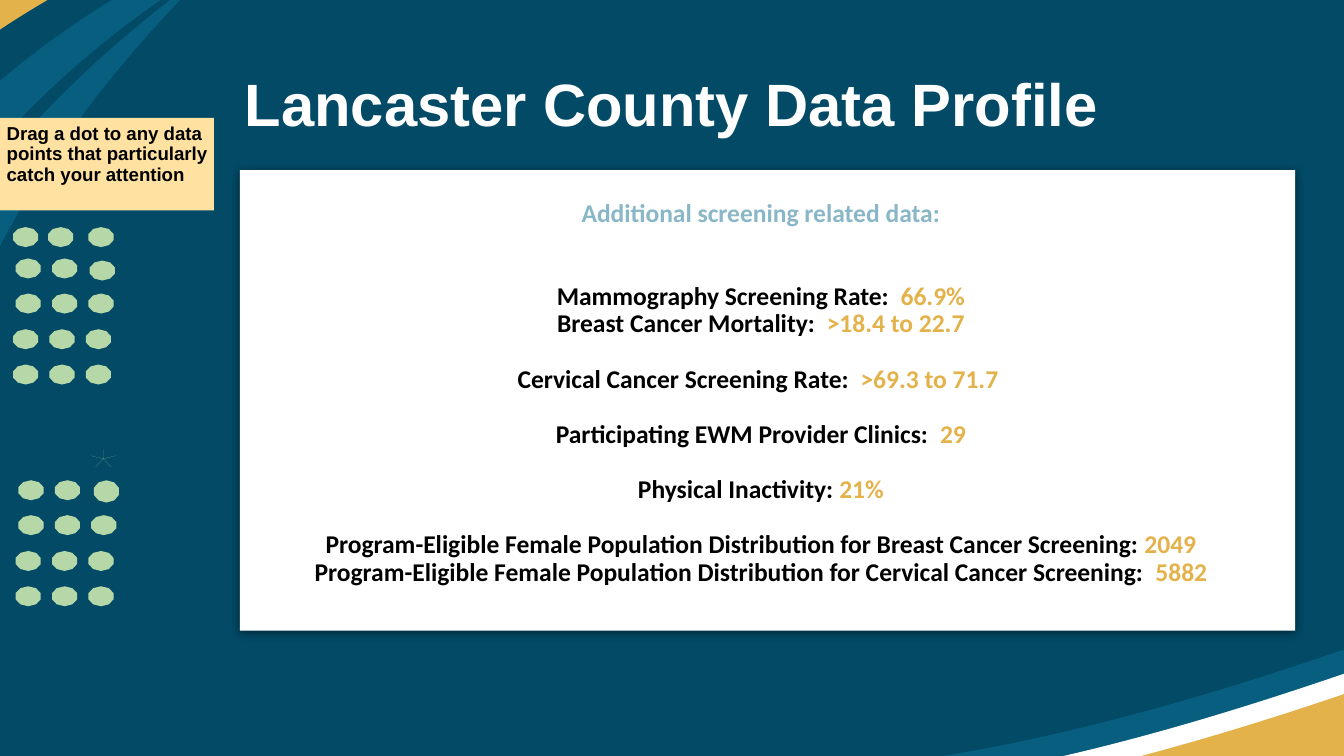
from lxml.etree import SubElement
from pptx import Presentation
from pptx.dml.color import RGBColor
from pptx.enum.shapes import MSO_SHAPE
from pptx.enum.text import MSO_ANCHOR, PP_ALIGN
from pptx.oxml.ns import qn
from pptx.util import Pt

COLORS = {
    "navy": "024A66", "teal": "075E7F", "gold": "E3B24A", "white": "FFFFFF",
    "cream": "FFE2A1", "dot": "B6D7A8", "sky": "89B7C8", "black": "000000",
}

TITLE = "Lancaster County Data Profile"
PROMPT = "Drag a dot to any data points that particularly catch your attention"
HEADING = "Additional screening related data:"
FACT_GROUPS = [
    [("Mammography Screening Rate:  ", "66.9%"),
     ("Breast Cancer Mortality:  ", ">18.4 to 22.7")],
    [("Cervical Cancer Screening Rate:  ", ">69.3 to 71.7 ")],
    [("Participating EWM Provider Clinics:  ", "29")],
    [("Physical Inactivity: ", "21%")],
    [("Program-Eligible Female Population Distribution for Breast Cancer Screening: ", "2049"),
     ("Program-Eligible Female Population Distribution for Cervical Cancer Screening:  ", "5882")],
]
LINE_GAP = 14.8

DOT_ROWS = [(7, 121.7), (8.4, 138.5), (8.4, 157.3), (7, 176.4), (7, 195.3),
            (9.9, 257.3), (9.9, 276), (8.4, 295.2), (8.4, 314.1)]
DOT_NUDGES = {(0, 1): (-0.7, 0, 0), (0, 2): (1.4, 0, 0), (1, 2): (0.7, 1.1, 0),
              (5, 2): (1.4, 0, 1.1)}
DOT_PITCH, DOT_WIDTH, DOT_HEIGHT = 19.5, 13.5, 9.7
SPARKLE = (48.7, 240.5)

RAY_TOP = [(203.8, -64.1), (123.1, -43.9, 46.8, -10.1, -17.3, 41.8),
           (-13.7, 59, -10.8, 75.6, -13.7, 91.4)]
SWOOSHES = [
    ("gold", [(100, -36), (-31, -36), (-30.2, -8.6, -27.4, 19.4, -36, 42.5),
              (4.3, 9.4, 51.1, -16.6, 100, -36)]),
    ("teal", [(111.6, -15.1), (43.9, 33.1, -14.4, 93.6, -54, 164.9),
              (-44.6, 179.3, -35.3, 194.4, -32.4, 210.2),
              (-5.8, 123.8, 46.8, 48.2, 111.6, -15.1)]),
    ("teal", RAY_TOP + [(43.2, 21.6, 120.2, -28.8, 203.8, -64.1)]),
    ("navy", RAY_TOP + [(-10.8, 88.6, -7.9, 85, -5.8, 82.1),
                        (-6.5, 72.7, -8.6, 62.6, -11.5, 53.3),
                        (49.7, -2.2, 124.6, -39.6, 203.8, -64.1)]),
    ("teal", [(752.4, 401), (744.5, 407.5, 735.8, 411.8, 725.8, 415.4), (408.2, 415.4),
              (421.2, 414.7, 434.2, 414, 447.1, 413.3),
              (478.8, 409.7, 510.5, 404.6, 542.2, 398.2),
              (619.2, 382.3, 694.8, 357.8, 769, 330.5),
              (784.1, 353.5, 774, 384.5, 752.4, 401)]),
    ("white", [(754.6, 413.3), (753.8, 414, 752.4, 414.7, 751.7, 415.4), (517, 415.4),
               (526.3, 414, 535.7, 411.8, 545, 410.4),
               (622.1, 394.6, 697.7, 369.4, 771.8, 342.7),
               (786.2, 365, 776.2, 396.7, 754.6, 413.3)]),
    ("gold", [(569.5, 415.4), (638.6, 399.6, 707, 377.3, 774, 352.8),
              (786.2, 372.2, 780.5, 398.2, 765.4, 415.4)]),
]


def rgb(name):
    return RGBColor.from_string(COLORS[name])


def paint(shape, color):
    shape.shadow.inherit = False
    shape.fill.solid()
    shape.fill.fore_color.rgb = rgb(color)
    shape.line.fill.background()
    return shape


def add_block(slide, kind, left, top, width, height, color):
    return paint(slide.shapes.add_shape(kind, Pt(left), Pt(top), Pt(width), Pt(height)), color)


def add_swoosh(slide, color, segments):
    start, *ends = [(Pt(segment[-2]), Pt(segment[-1])) for segment in segments]
    builder = slide.shapes.build_freeform(*start)
    builder.add_line_segments(ends, close=True)
    swoosh = paint(builder.convert_to_shape(), color)
    steps = list(swoosh._element.iter(qn("a:lnTo")))
    for step, segment in zip(steps, segments[1:]):
        if len(segment) == 6:
            step.tag = qn("a:cubicBezTo")
            step.clear()
            for x, y in zip(segment[::2], segment[1::2]):
                SubElement(step, qn("a:pt"), x=str(Pt(x) - swoosh.left), y=str(Pt(y) - swoosh.top))


def add_dot(slide, left, top, height=DOT_HEIGHT, waist=0.5):
    dot = add_block(slide, MSO_SHAPE.STAR_5_POINT, left, top, DOT_WIDTH, height, "dot")
    dot.adjustments[0] = waist


def write(frame, paragraphs, size, font, align=PP_ALIGN.LEFT, anchor=MSO_ANCHOR.TOP,
          insets=(0, 0, 0, 0), line_spacing=None):
    frame.word_wrap = True
    frame.vertical_anchor = anchor
    frame.margin_left, frame.margin_top, frame.margin_right, frame.margin_bottom = map(Pt, insets)
    for index, (runs, gap) in enumerate(paragraphs):
        paragraph = frame.add_paragraph() if index else frame.paragraphs[0]
        paragraph.alignment = align
        if line_spacing:
            paragraph.line_spacing = line_spacing
        if gap:
            paragraph.space_before = Pt(gap)
        for text, color in runs:
            run = paragraph.add_run()
            run.text = text
            run.font.name, run.font.size, run.font.bold = font, Pt(size), True
            run.font.color.rgb = rgb(color)


def add_soft_shadow(shape):
    effects = shape._element.spPr.find(qn("a:effectLst"))
    shadow = SubElement(effects, qn("a:outerShdw"), blurRad=str(Pt(4.5)), dist=str(Pt(1.5)),
                        dir="5400000", algn="bl", rotWithShape="0")
    tint = SubElement(shadow, qn("a:srgbClr"), val=COLORS["black"])
    SubElement(tint, qn("a:alpha"), val="49000")


def main():
    deck = Presentation()
    deck.slide_width, deck.slide_height = Pt(720), Pt(405)
    slide = deck.slides.add_slide(deck.slide_layouts[6])
    slide.background.fill.solid()
    slide.background.fill.fore_color.rgb = rgb("navy")

    for color, segments in SWOOSHES:
        add_swoosh(slide, color, segments)

    title = slide.shapes.add_textbox(Pt(56.4), Pt(32.4), Pt(607), Pt(45.4))
    write(title.text_frame, [([(TITLE, "white")], 0)], size=32, font="Arial",
          align=PP_ALIGN.CENTER, anchor=MSO_ANCHOR.MIDDLE)

    prompt = add_block(slide, MSO_SHAPE.RECTANGLE, 0, 63.2, 114.7, 49.5, "cream")
    write(prompt.text_frame, [([(PROMPT, "black")], 0)], size=10, font="Arial",
          insets=(3.6, 3.6, 2.5, 3.6), line_spacing=0.9)

    facts = [([(HEADING, "sky")], 0)]
    for number, group in enumerate(FACT_GROUPS):
        for position, (label, value) in enumerate(group):
            blank_lines = 0 if position else 1 if number else 2
            facts.append(([(label, "black"), (value, "gold")], blank_lines * LINE_GAP))
    card = add_block(slide, MSO_SHAPE.RECTANGLE, 128.5, 91.2, 565.3, 246.7, "white")
    add_soft_shadow(card)
    write(card.text_frame, facts, size=13.7, font="Calibri", align=PP_ALIGN.CENTER,
          anchor=MSO_ANCHOR.MIDDLE, insets=(0, 7.2, 7.2, 14.6), line_spacing=0.9)

    for row, (left, top) in enumerate(DOT_ROWS):
        for column in range(3):
            right, down, taller = DOT_NUDGES.get((row, column), (0, 0, 0))
            add_dot(slide, left + column * DOT_PITCH + right, top + down, DOT_HEIGHT + taller)
    add_dot(slide, *SPARKLE, waist=0)

    deck.save("out.pptx")


if __name__ == "__main__":
    main()
